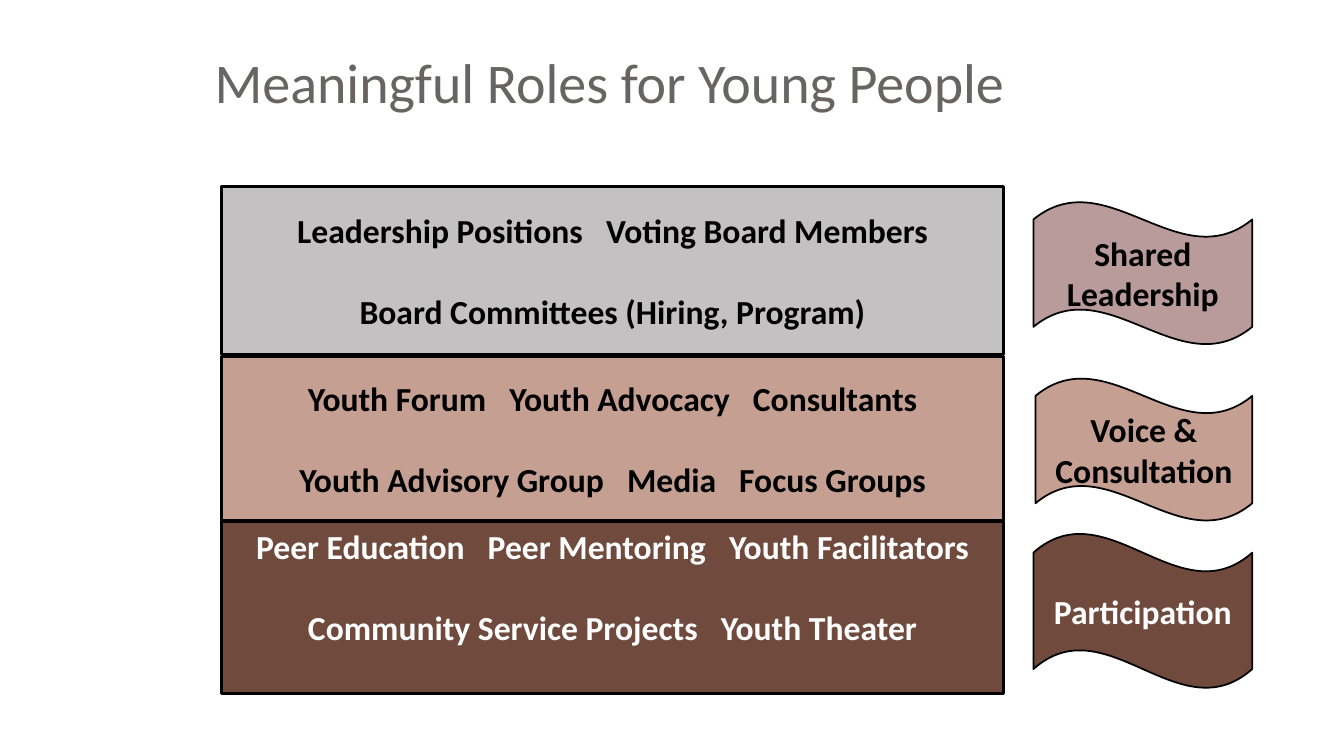
from dataclasses import dataclass

from pptx import Presentation, util as u
from pptx.dml.color import RGBColor
from pptx.enum import shapes, text

PX = 9144  # EMU per px, 100 px to the inch


@dataclass(frozen=True)
class Theme:
    font: str = "Calibri"
    title_size: int = 40
    body_size: int = 24
    line_height: int = 29
    role_gap: int = 11  # extra points between roles on one line
    title: str = "696464"
    outline: str = "000000"
    dark_text: str = "000000"
    light_text: str = "FFFFFF"
    grey: str = "C3C1C1"
    mauve: str = "B99B9B"
    tan: str = "C49F92"
    brown: str = "704A3D"


@dataclass(frozen=True)
class Box:
    left: int
    top: int
    width: int
    height: int

    def emu(self) -> tuple[int, int, int, int]:
        return self.left * PX, self.top * PX, self.width * PX, self.height * PX


Lines = tuple[tuple[str, ...], ...]


@dataclass(frozen=True)
class Panel:
    box: Box
    fill: str
    ink: str
    lines: Lines
    bottom_inset: int = 5


THEME = Theme()

TIERS = (
    Panel(Box(220, 185, 775, 167), THEME.grey, THEME.dark_text, (
        ("Leadership Positions", "Voting Board Members"),
        ("Board Committees (Hiring, Program)",))),
    Panel(Box(220, 354, 775, 162), THEME.tan, THEME.dark_text, (
        ("Youth Forum", "Youth Advocacy", "Consultants"),
        ("Youth Advisory Group", "Media", "Focus Groups"))),
    Panel(Box(220, 517, 775, 171), THEME.brown, THEME.light_text, (
        ("Peer Education", "Peer Mentoring", "Youth Facilitators"),
        ("Community Service Projects", "Youth Theater")), bottom_inset=46),
)

LEVELS = (
    Panel(Box(1025, 200, 217, 142), THEME.mauve, THEME.dark_text,
          (("Shared Leadership",),)),
    Panel(Box(1027, 375, 215, 142), THEME.tan, THEME.dark_text,
          (("Voice &",), ("Consultation",))),
    Panel(Box(1025, 529, 217, 154), THEME.brown, THEME.light_text,
          (("Participation",),)),
)


def add_run(paragraph, words: str, size: int, colour: str, bold: bool = False):
    run = paragraph.add_run()
    run.text = words
    run.font.name = THEME.font
    run.font.size = u.Pt(size)
    run.font.bold = bold
    run.font.color.rgb = RGBColor.from_string(colour)
    return run


def add_panel(slide, panel: Panel, preset: shapes.MSO_SHAPE,
              outline_width: float, line_gap: int) -> None:
    shape = slide.shapes.add_shape(preset, *panel.box.emu())
    shape.shadow.inherit = False
    shape.fill.solid()
    shape.fill.fore_color.rgb = RGBColor.from_string(panel.fill)
    shape.line.color.rgb = RGBColor.from_string(THEME.outline)
    shape.line.width = u.Pt(outline_width)

    frame = shape.text_frame
    frame.word_wrap = True
    frame.vertical_anchor = text.MSO_ANCHOR.MIDDLE
    frame.margin_bottom = panel.bottom_inset * PX
    for row, roles in enumerate(panel.lines):
        paragraph = frame.add_paragraph() if row else frame.paragraphs[0]
        paragraph.alignment = text.PP_ALIGN.CENTER
        paragraph.space_before = u.Pt(line_gap if row else 0)
        for column, role in enumerate(roles):
            if column:
                # One space, widened by character spacing
                gap = add_run(paragraph, " ", THEME.body_size, panel.ink, True)
                gap.font._element.set("spc", str(THEME.role_gap * 100))
            add_run(paragraph, role, THEME.body_size, panel.ink, True)


def add_title(slide, words: str, box: Box) -> None:
    frame = slide.shapes.add_textbox(*box.emu()).text_frame
    frame.word_wrap = True
    add_run(frame.paragraphs[0], words, THEME.title_size, THEME.title)


def main() -> None:
    deck = Presentation()
    deck.slide_width, deck.slide_height = 1333 * PX, 750 * PX
    slide = deck.slides.add_slide(deck.slide_layouts[6])

    # Stacked tiers of roles
    for tier in TIERS:
        add_panel(slide, tier, shapes.MSO_SHAPE.RECTANGLE, 2.25,
                  THEME.line_height)

    # Title
    add_title(slide, "Meaningful Roles for Young People",
              Box(203, 42, 808, 77))

    # Waves naming the level of each tier
    for level in LEVELS:
        add_panel(slide, level, shapes.MSO_SHAPE.WAVE, 1.25, 0)

    deck.save("out.pptx")


if __name__ == "__main__":
    main()
